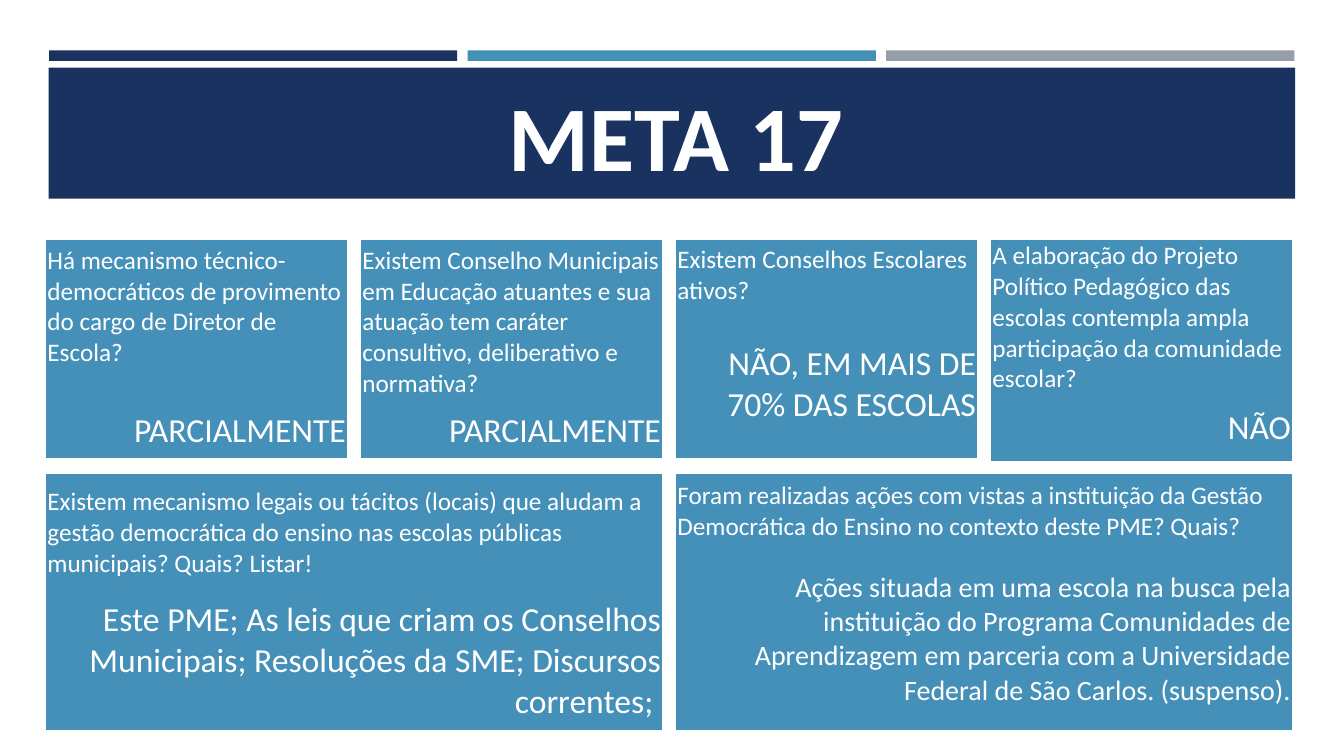
"""Build the META 17 slide: a title banner above six question-and-answer tables."""
from pptx import Presentation
from pptx.dml.color import RGBColor
from pptx.enum.shapes import MSO_SHAPE
from pptx.enum.text import MSO_ANCHOR, PP_ALIGN
from pptx.util import Pt

RECTANGLE = MSO_SHAPE.RECTANGLE
MIDDLE, BOTTOM = MSO_ANCHOR.MIDDLE, MSO_ANCHOR.BOTTOM
LEFT, CENTER, RIGHT = PP_ALIGN.LEFT, PP_ALIGN.CENTER, PP_ALIGN.RIGHT

COLORS = {"navy": "1A3260", "blue": "4590B8", "gray": "969FA7", "white": "FFFFFF"}
FONT = "Calibri"
GRID_LEFT, COLUMN_STEP, COLUMN_WIDTH = 33.2, 225, 214.6
UPPER_TOP, LOWER_TOP = 171.4, 338.4
LINE_HEIGHT = 22


def add_bar(left, top, width, height, color):
    shape = slide.shapes.add_shape(RECTANGLE, Pt(left), Pt(top), Pt(width), Pt(height))
    shape.shadow.inherit = False
    shape.fill.solid()
    shape.fill.fore_color.rgb = RGBColor.from_string(COLORS[color])
    shape.line.fill.background()


def add_text(paragraph, text, size, alignment, bold=False):
    paragraph.alignment = alignment
    run = paragraph.add_run()
    run.text = text
    run.font.name = FONT
    run.font.size = Pt(size)
    run.font.bold = bold
    run.font.color.rgb = RGBColor.from_string(COLORS["white"])


presentation = Presentation()
presentation.slide_width, presentation.slide_height = Pt(960), Pt(540)
slide = presentation.slides.add_slide(presentation.slide_layouts[6])

for index, color in enumerate(("navy", "blue", "gray")):
    add_bar(35 + index * 299, 36, 291.6, 7.5, color)
add_bar(34.8, 48.4, 890.4, 93.6, "navy")

title = slide.shapes.add_textbox(Pt(51.8), Pt(55.4), Pt(862.6), Pt(80))
frame = title.text_frame
frame.word_wrap = True
frame.vertical_anchor = BOTTOM
frame.margin_left = frame.margin_right = frame.margin_top = frame.margin_bottom = 0
add_text(frame.paragraphs[0], "META 17", 66, CENTER, bold=True)

# Each entry: column, span, top, row heights, lines kept free, question, answer, answer size
questions = [
    (0, 1, UPPER_TOP, (120.4, 35.6), 1,
     "Há mecanismo técnico-democráticos de provimento do cargo de Diretor de Escola?",
     "PARCIALMENTE", 24),
    (1, 1, UPPER_TOP, (120.4, 35.6), 0,
     "Existem Conselho Municipais em Educação atuantes e sua atuação tem caráter "
     "consultivo, deliberativo e normativa?",
     "PARCIALMENTE", 24),
    (2, 1, UPPER_TOP, (53.6, 102.4), 0,
     "Existem Conselhos Escolares ativos?",
     "NÃO, EM MAIS DE 70% DAS ESCOLAS", 24),
    (3, 1, UPPER_TOP, (114, 44), 0,
     "A elaboração do Projeto Político Pedagógico das escolas contempla ampla "
     "participação da comunidade escolar?",
     "NÃO", 24),
    (0, 2, LOWER_TOP, (87.6, 95.4), 0,
     "Existem mecanismo legais ou tácitos (locais) que aludam a gestão democrática "
     "do ensino nas escolas públicas municipais? Quais? Listar!",
     "Este PME; As leis que criam os Conselhos Municipais; Resoluções da SME; "
     "Discursos correntes; ", 24),
    (2, 2, LOWER_TOP, (56.2, 126.8), 0,
     "Foram realizadas ações com vistas a instituição da Gestão Democrática do Ensino "
     "no contexto deste PME? Quais?",
     "Ações situada em uma escola na busca pela instituição do Programa Comunidades de "
     "Aprendizagem em parceria com a Universidade Federal de São Carlos. (suspenso).", 20),
]

for column, span, top, heights, free_lines, question, answer, answer_size in questions:
    left = GRID_LEFT + column * COLUMN_STEP
    width = COLUMN_WIDTH + (span - 1) * COLUMN_STEP
    table = slide.shapes.add_table(2, 1, Pt(left), Pt(top), Pt(width), Pt(sum(heights))).table
    table.first_row = table.horz_banding = False
    rows = ((question, 18, LEFT, free_lines), (answer, answer_size, RIGHT, 0))
    for index, (text, size, alignment, free) in enumerate(rows):
        table.rows[index].height = Pt(heights[index])
        cell = table.cell(index, 0)
        cell.fill.solid()
        cell.fill.fore_color.rgb = RGBColor.from_string(COLORS["blue"])
        cell.vertical_anchor = MIDDLE
        cell.margin_left = cell.margin_right = cell.margin_top = Pt(0.7)
        cell.margin_bottom = Pt(3.6 + free * LINE_HEIGHT)
        add_text(cell.text_frame.paragraphs[0], text, size, alignment)

# Remove the table style so that no inner borders are drawn
for shape in slide.shapes:
    if shape.has_table:
        for style in shape.table._tbl.tblPr.findall("{*}tableStyleId"):
            style.text = "{2D5ABB26-0587-4C30-8999-92F81FD0307C}"

presentation.save("out.pptx")
